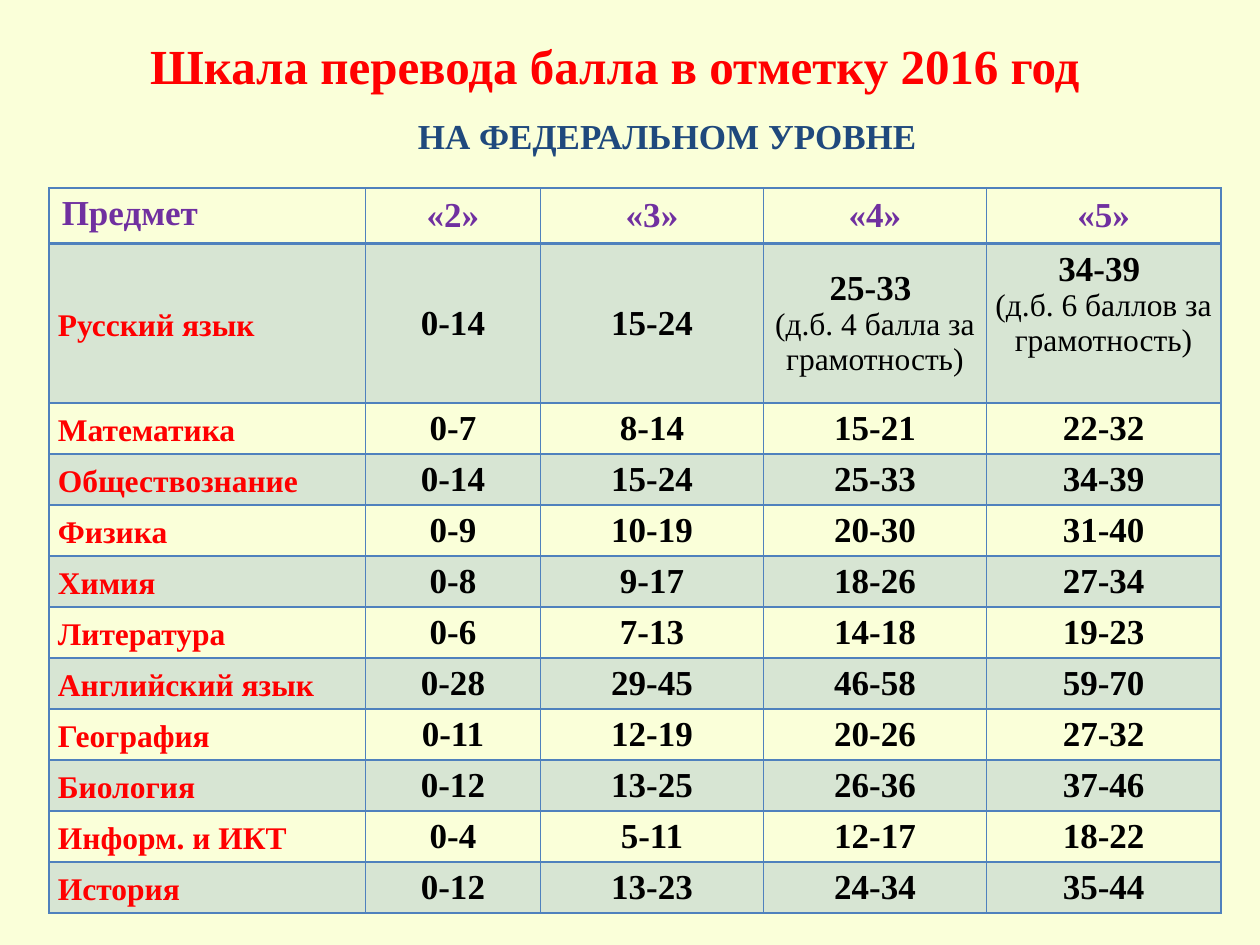
from lxml import etree
from pptx import Presentation
from pptx.dml.color import RGBColor
from pptx.enum import text
from pptx.oxml import ns
from pptx.util import Inches, Pt

FONT = "Times New Roman"
COLORS = {
    "background": "FAFFD9",
    "title": "FF0000",
    "level": "1F497D",
    "heading": "7030A0",
    "subject": "FF0000",
    "score": "000000",
    "grid": "4F81BD",
}
HEADINGS = ["Предмет", "«2»", "«3»", "«4»", "«5»"]
SCALE = [
    ["Русский язык", "0-14", "15-24", "25-33 \n(д.б. 4 балла за грамотность)",
     "34-39 \n(д.б. 6 баллов за грамотность)"],
    ["Математика", "0-7", "8-14", "15-21", "22-32"],
    ["Обществознание", "0-14", "15-24", "25-33", "34-39"],
    ["Физика", "0-9", "10-19", "20-30", "31-40"],
    ["Химия", "0-8", "9-17", "18-26", "27-34"],
    ["Литература", "0-6", "7-13", "14-18", "19-23"],
    ["Английский язык", "0-28", "29-45", "46-58", "59-70"],
    ["География", "0-11", "12-19", "20-26", "27-32"],
    ["Биология", "0-12", "13-25", "26-36", "37-46"],
    ["Информ. и ИКТ", "0-4", "5-11", "12-17", "18-22"],
    ["История", "0-12", "13-23", "24-34", "35-44"],
]
COLUMN_WIDTHS = [2.51, 1.39, 1.77, 1.77, 1.86]
ROW_HEIGHTS = [0.44, 1.27] + [0.405] * 10


def format_paragraph(paragraph, size, color, bold=True, align=text.PP_ALIGN.CENTER):
    """Align a paragraph and style its runs."""
    paragraph.alignment = align
    for run in paragraph.runs:
        run.font.name = FONT
        run.font.size = Pt(size)
        run.font.bold = bold
        run.font.color.rgb = RGBColor.from_string(COLORS[color])


def add_title(slide):
    """Place and style the slide title."""
    title = slide.shapes.title
    title.left, title.top = Inches(0.47), Inches(0.23)
    title.width, title.height = Inches(8.82), Inches(0.57)
    frame = title.text_frame
    frame.text = "Шкала перевода балла в отметку 2016 год"
    frame.auto_size = text.MSO_AUTO_SIZE.NONE
    frame.vertical_anchor = text.MSO_ANCHOR.BOTTOM
    format_paragraph(frame.paragraphs[0], 28, "title")


def add_level(slide):
    """Add the line that names the level of the scale."""
    level = slide.shapes.add_textbox(Inches(3.2), Inches(0.86), Inches(4.19), Inches(0.44))
    frame = level.text_frame
    frame.text = "НА ФЕДЕРАЛЬНОМ УРОВНЕ"
    frame.word_wrap = False
    frame.auto_size = text.MSO_AUTO_SIZE.SHAPE_TO_FIT_TEXT
    format_paragraph(frame.paragraphs[0], 20, "level")


def set_borders(cell, top, bottom):
    """Draw the four borders of a cell."""
    properties = cell._tc.get_or_add_tcPr()
    widths = {"lnL": 1, "lnR": 1, "lnT": top, "lnB": bottom}
    for position, (side, width) in enumerate(widths.items()):
        border = etree.Element(ns.qn(f"a:{side}"), w=str(Pt(width)))
        fill = etree.SubElement(border, ns.qn("a:solidFill"))
        etree.SubElement(fill, ns.qn("a:srgbClr"), val=COLORS["grid"])
        properties.insert(position, border)


def set_band(cell, shaded):
    """Give a cell the translucent band fill or none."""
    if not shaded:
        cell.fill.background()
        return
    cell.fill.solid()
    cell.fill.fore_color.rgb = RGBColor.from_string(COLORS["grid"])
    color = cell._tc.tcPr.find(f".//{ns.qn('a:srgbClr')}")
    etree.SubElement(color, ns.qn("a:alpha"), val="20000")


def set_margins(cell, side):
    """Centre a cell vertically with equal side margins."""
    cell.vertical_anchor = text.MSO_ANCHOR.MIDDLE
    cell.margin_left = cell.margin_right = Inches(side)
    cell.margin_top = cell.margin_bottom = 0


def fill_cell(cell, content, row, column):
    """Write one cell and format it by its place in the table."""
    cell.text_frame.text = content
    first, *remarks = cell.text_frame.paragraphs
    if column:
        set_margins(cell, 0.04)
        format_paragraph(first, 20, "score" if row else "heading")
    elif row:
        set_margins(cell, 0.07)
        format_paragraph(first, 18, "subject", align=text.PP_ALIGN.LEFT)
        first.line_spacing = 1.15
    else:
        format_paragraph(first, 20, "heading", align=text.PP_ALIGN.LEFT)
    for remark in remarks:
        format_paragraph(remark, 18, "score", bold=False)
    set_band(cell, row % 2 == 1)
    set_borders(cell, 2 if row == 1 else 1, 2 if row == 0 else 1)


def add_scale(slide):
    """Add the table of scores and marks."""
    rows = [HEADINGS] + SCALE
    scale = slide.shapes.add_table(
        len(rows), len(HEADINGS), Inches(0.39), Inches(1.49),
        Inches(sum(COLUMN_WIDTHS)), Inches(sum(ROW_HEIGHTS))).table
    scale.horz_banding = False
    for column, width in zip(scale.columns, COLUMN_WIDTHS):
        column.width = Inches(width)
    for row, height in zip(scale.rows, ROW_HEIGHTS):
        row.height = Inches(height)
    for r, contents in enumerate(rows):
        for c, content in enumerate(contents):
            fill_cell(scale.cell(r, c), content, r, c)
    scale.cell(1, 4).margin_bottom = Inches(0.3)


def main():
    """Build and save the slide."""
    deck = Presentation()
    deck.slide_width, deck.slide_height = Inches(10), Inches(7.5)
    slide = deck.slides.add_slide(deck.slide_layouts[5])
    slide.background.fill.solid()
    slide.background.fill.fore_color.rgb = RGBColor.from_string(COLORS["background"])
    add_title(slide)
    add_level(slide)
    add_scale(slide)
    deck.save("out.pptx")


if __name__ == "__main__":
    main()
